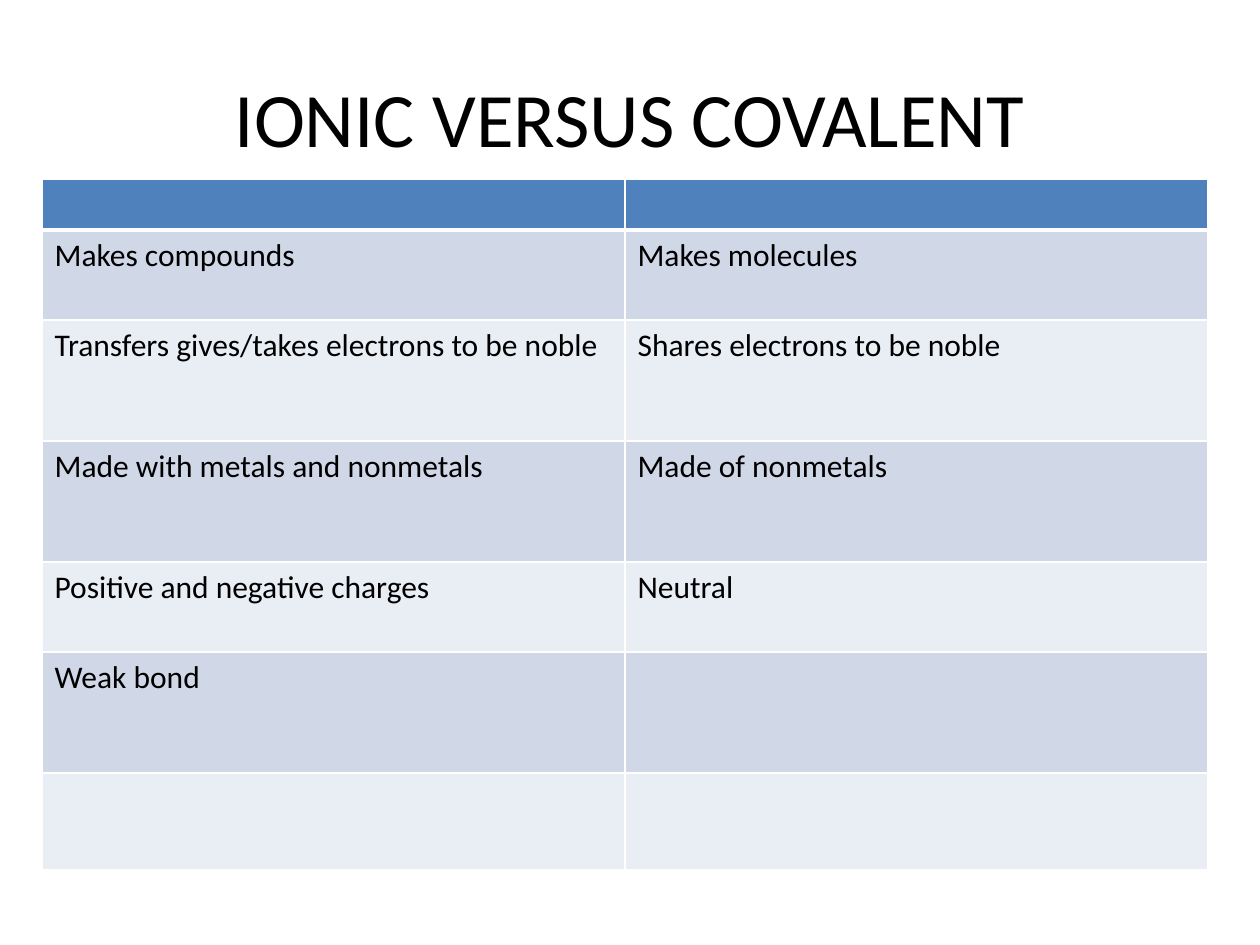
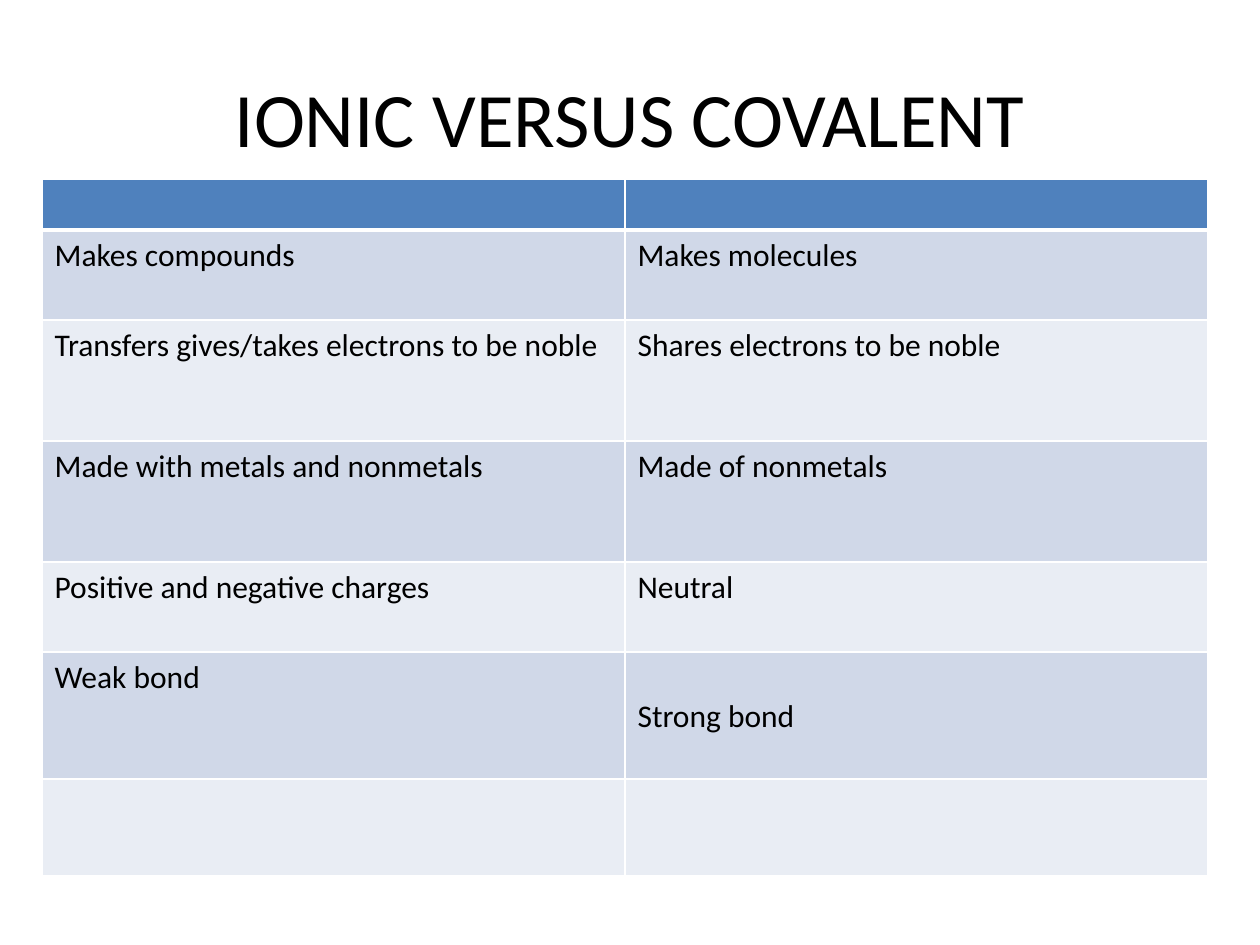
import pptx
import pptx.util
import pptx.dml.color
import pptx.enum.text
import pptx.oxml.ns
import lxml.etree

TITLE = "IONIC VERSUS COVALENT"
ROWS = [
    ("", ""),
    ("Makes compounds", "Makes molecules"),
    ("Transfers gives/takes electrons to be noble", "Shares electrons to be noble"),
    ("Made with metals and nonmetals", "Made of nonmetals"),
    ("Positive and negative charges", "Neutral"),
    ("Weak bond", ""),
    ("", ""),
]
BOND = 5
HIGH = [50, 90, 121, 121, 90, 121, 97]
SLIDES = [
    {"bond": "", "high": 121, "top": 6},
    {"bond": "Strong bond", "high": 127, "top": 45},
]
COLORS = {"head": "4F81BD", "dark": "D0D8E8", "light": "E9EDF4",
          "line": "FFFFFF", "text": "000000"}
FONT = "Calibri"
SIZE = (1260, 945)
TITLE_BOX = (63, 38, 1134, 158)
LEFT, TOP, WIDE = 42, 179, 583


def px(n):
    return pptx.util.Emu(round(n * 914400 / 126))


def color(name):
    return pptx.dml.color.RGBColor.from_string(COLORS[name])


def style(par, size):
    par.font.name = FONT
    par.font.size = pptx.util.Pt(size)
    par.font.color.rgb = color("text")


def border(cell, row):
    qn = pptx.oxml.ns.qn
    props = cell._tc.get_or_add_tcPr()
    widths = {"L": 1, "R": 1, "T": 3 if row == 1 else 1, "B": 3 if row == 0 else 1}
    for spot, (side, width) in enumerate(widths.items()):
        line = lxml.etree.Element(qn("a:ln" + side), w=str(pptx.util.Pt(width)))
        fill = lxml.etree.SubElement(line, qn("a:solidFill"))
        lxml.etree.SubElement(fill, qn("a:srgbClr"), val=COLORS["line"])
        props.insert(spot, line)


def add_title(slide):
    title = slide.shapes.title
    title.left, title.top, title.width, title.height = map(px, TITLE_BOX)
    frame = title.text_frame
    frame.text = TITLE
    frame.vertical_anchor = pptx.enum.text.MSO_ANCHOR.MIDDLE
    par = frame.paragraphs[0]
    par.alignment = pptx.enum.text.PP_ALIGN.CENTER
    style(par, 44)


def add_grid(slide, part):
    rows = list(ROWS)
    rows[BOND] = (ROWS[BOND][0], part["bond"])
    high = list(HIGH)
    high[BOND] = part["high"]
    grid = slide.shapes.add_table(len(rows), 2, px(LEFT), px(TOP),
                                  px(2 * WIDE), px(sum(high))).table
    for col in grid.columns:
        col.width = px(WIDE)
    for r, texts in enumerate(rows):
        grid.rows[r].height = px(high[r])
        band = "head" if r == 0 else "dark" if r % 2 else "light"
        for c, text in enumerate(texts):
            cell = grid.cell(r, c)
            cell.text = text
            style(cell.text_frame.paragraphs[0], 18)
            cell.fill.solid()
            cell.fill.fore_color.rgb = color(band)
            border(cell, r)
    grid.cell(BOND, 1).margin_top = px(part["top"])


def main():
    deck = pptx.Presentation()
    deck.slide_width, deck.slide_height = map(px, SIZE)
    for part in SLIDES:
        slide = deck.slides.add_slide(deck.slide_layouts[5])
        add_title(slide)
        add_grid(slide, part)
    deck.save("out.pptx")


if __name__ == "__main__":
    main()
